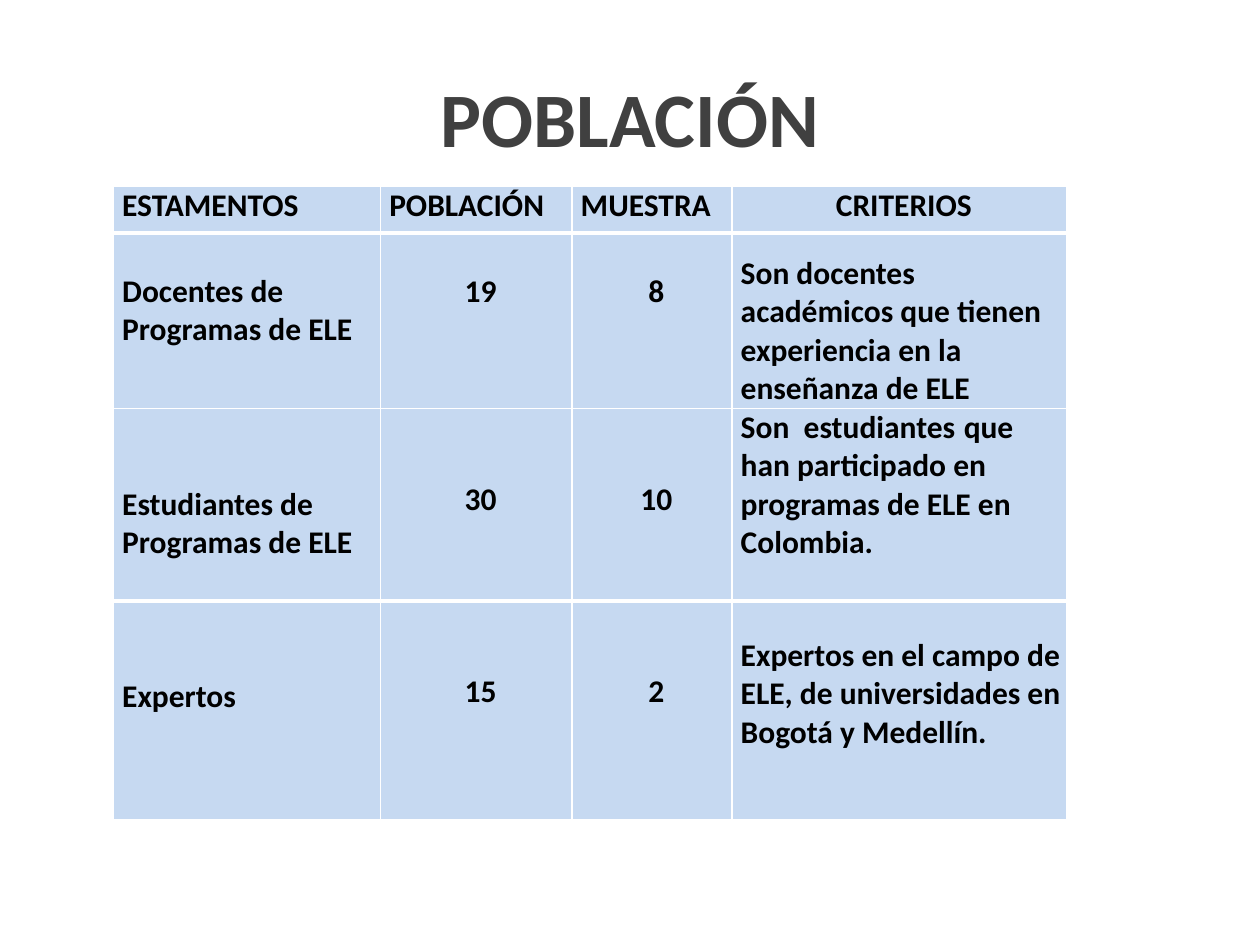
from typing import NamedTuple

from lxml import etree
from pptx import Presentation
from pptx.dml.color import RGBColor
from pptx.enum.text import MSO_ANCHOR, PP_ALIGN
from pptx.oxml.ns import qn
from pptx.util import Inches, Pt

LEFT, CENTER = PP_ALIGN.LEFT, PP_ALIGN.CENTER
TOP, MIDDLE = MSO_ANCHOR.TOP, MSO_ANCHOR.MIDDLE
FONT = "Calibri"
BLACK, GRAY, WHITE, PALE_BLUE = "000000", "404040", "FFFFFF", "C6D9F1"
THIN, THICK = 1, 3
COLUMN_WIDTHS = (2.12, 1.52, 1.27, 2.66)
ROW_HEIGHTS = (0.37, 1.39, 1.53, 1.74)
THICK_RULES = (1, 3)
CRITERIA_TABS = (0.5, 1.36, 1.77)


class Entry(NamedTuple):
    text: str
    top: float = 0
    align: PP_ALIGN = LEFT
    tabs: tuple = ()


ROWS = (
    (
        Entry("ESTAMENTOS"),
        Entry("POBLACIÓN"),
        Entry("MUESTRA"),
        Entry("CRITERIOS", align=CENTER),
    ),
    (
        Entry("Docentes de Programas de ELE", 0.31),
        Entry("19", 0.31, CENTER),
        Entry("8", 0.31, CENTER),
        Entry("Son docentes académicos que tienen experiencia en la enseñanza de ELE", 0.17),
    ),
    (
        Entry("Estudiantes de Programas de ELE", 0.61),
        Entry("30", 0.57, CENTER),
        Entry("10", 0.57, CENTER),
        Entry("Son\testudiantes\tque han participado en programas de ELE en Colombia.",
              tabs=CRITERIA_TABS),
    ),
    (
        Entry("Expertos", 0.61),
        Entry("15", 0.57, CENTER),
        Entry("2", 0.57, CENTER),
        Entry("Expertos en el campo de ELE, de universidades en Bogotá y Medellín.", 0.28),
    ),
)


def color(value: str) -> RGBColor:
    return RGBColor.from_string(value)


def write_text(frame, text: str, *, size: float, fill: str,
               align: PP_ALIGN = LEFT, tabs: tuple = ()) -> None:
    frame.word_wrap = True
    para = frame.paragraphs[0]
    para.alignment = align
    if tabs:
        tab_list = etree.SubElement(para._p.get_or_add_pPr(), qn("a:tabLst"))
        for position in tabs:
            etree.SubElement(tab_list, qn("a:tab"), pos=str(Inches(position)), algn="l")
    span = para.add_run()
    span.text = text
    span.font.name = FONT
    span.font.size = Pt(size)
    span.font.bold = True
    span.font.color.rgb = color(fill)


def add_border(cell, side: str, width: float) -> None:
    line = etree.SubElement(cell._tc.get_or_add_tcPr(), qn(f"a:ln{side}"), w=str(Pt(width)))
    fill = etree.SubElement(line, qn("a:solidFill"))
    etree.SubElement(fill, qn("a:srgbClr"), val=WHITE)


def fill_cell(cell, entry: Entry, row: int) -> None:
    cell.margin_left, cell.margin_top = Inches(0.07), Inches(entry.top)
    cell.margin_right = cell.margin_bottom = 0
    cell.vertical_anchor = TOP
    add_border(cell, "L", THIN)
    add_border(cell, "R", THIN)
    add_border(cell, "T", THICK if row in THICK_RULES else THIN)
    add_border(cell, "B", THICK if row + 1 in THICK_RULES else THIN)
    cell.fill.solid()
    cell.fill.fore_color.rgb = color(PALE_BLUE)
    write_text(cell.text_frame, entry.text, size=18, fill=BLACK,
               align=entry.align, tabs=entry.tabs)


def add_population_table(page) -> None:
    frame = page.shapes.add_table(
        len(ROWS), len(COLUMN_WIDTHS), Inches(0.9), Inches(1.48),
        Inches(sum(COLUMN_WIDTHS)), Inches(sum(ROW_HEIGHTS)))
    table = frame.table
    table.first_row = table.horz_banding = False
    for column, width in zip(table.columns, COLUMN_WIDTHS):
        column.width = Inches(width)
    for row, height in zip(table.rows, ROW_HEIGHTS):
        row.height = Inches(height)
    for row, entries in enumerate(ROWS):
        for column, entry in enumerate(entries):
            fill_cell(table.cell(row, column), entry, row)


def main() -> None:
    deck = Presentation()
    deck.slide_width, deck.slide_height = Inches(10), Inches(7.5)
    page = deck.slides.add_slide(deck.slide_layouts[5])
    title = page.shapes.title
    title.left, title.top = Inches(0.5), Inches(0.3)
    title.width, title.height = Inches(9), Inches(1.25)
    title.text_frame.vertical_anchor = MIDDLE
    write_text(title.text_frame, "POBLACIÓN", size=44, fill=GRAY, align=CENTER)
    add_population_table(page)
    deck.save("out.pptx")


if __name__ == "__main__":
    main()
